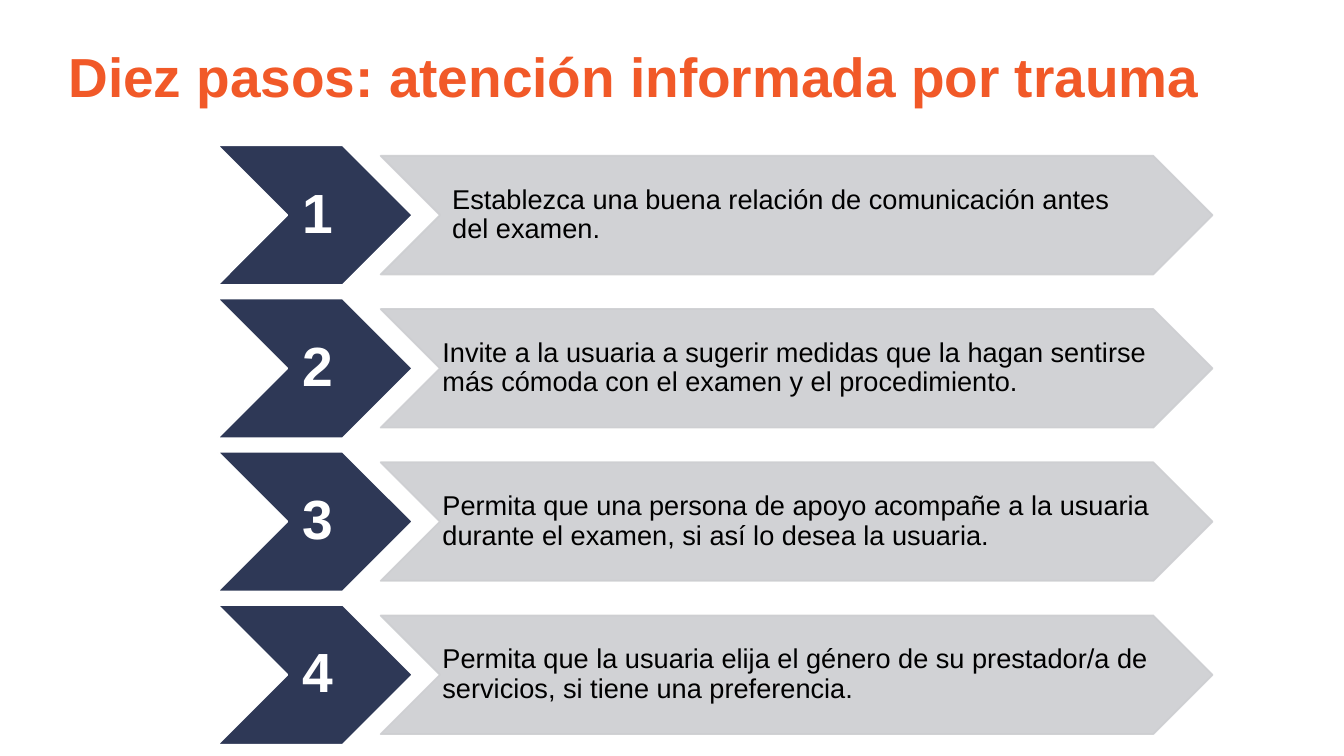
from lxml.etree import SubElement
from pptx import Presentation
from pptx.dml.color import RGBColor as Rgb
from pptx.enum.shapes import MSO_SHAPE as Kind
from pptx.enum.text import MSO_ANCHOR as Anchor, PP_ALIGN as Align
from pptx.oxml.ns import qn
from pptx.util import Pt

COLORS = {"title": "F15928", "navy": "2E3856", "gray": "CDCED1",
          "white": "FFFFFF", "black": "000000"}
FONT = "Arial"
TITLE = "Diez pasos: atención informada por trauma"
STEPS = [
    "Establezca una buena relación de comunicación antes del examen.",
    "Invite a la usuaria a sugerir medidas que la hagan sentirse más cómoda "
    "con el examen y el procedimiento.",
    "Permita que una persona de apoyo acompañe a la usuaria durante el examen, "
    "si así lo desea la usuaria.",
    "Permita que la usuaria elija el género de su prestador/a de servicios, "
    "si tiene una preferencia.",
]


def color(name):
    return Rgb.from_string(COLORS[name])


def add_text(slide, box, text, size, ink, bold=False, align=Align.LEFT,
             pads=(0, 0, 0, 0), lead=1.0):
    frame = slide.shapes.add_textbox(*map(Pt, box)).text_frame
    frame.word_wrap = True
    frame.vertical_anchor = Anchor.MIDDLE
    (frame.margin_left, frame.margin_top,
     frame.margin_right, frame.margin_bottom) = map(Pt, pads)
    para = frame.paragraphs[0]
    para.text = text
    para.alignment = align
    para.line_spacing = lead
    font = para.font
    font.name, font.size, font.bold = FONT, Pt(size), bold
    font.color.rgb = color(ink)


def add_arrow(slide, box, fill, line, alpha=100):
    shape = slide.shapes.add_shape(Kind.CHEVRON, *map(Pt, box))
    shape.shadow.inherit = False
    shape.fill.solid()
    shape.fill.fore_color.rgb = color(fill)
    shape.line.color.rgb = color(line)
    shape.line.width = Pt(2)
    if alpha < 100:
        for tone in shape.element.spPr.iter(qn("a:srgbClr")):
            SubElement(tone, qn("a:alpha"), val=str(alpha * 1000))


def add_step(slide, box, num, text):
    left, top, width, height = box
    add_arrow(slide, (left, top, 229.7, height), "navy", "white")
    add_text(slide, (left + 82, top, 65, height), str(num), 65, "white",
             True, Align.CENTER, (6.5, 3.6, 0, 3.6), 0.9)
    bar = top + 12.4, height - 24.8
    add_arrow(slide, (left + 192.2, bar[0], width - 192.2, bar[1]),
              "gray", "gray", 90)
    pads = (14.4,) * 4 if num == 1 else (2.9, 1.4, 0, 1.4)
    add_text(slide, (left + 262, bar[0], 841, bar[1]), text, 32, "black",
             pads=pads, lead=0.9)


def add_steps(slide, box):
    left, top, width, height = box
    pitch, tall = 180.5, height - 180.5 * (len(STEPS) - 1)
    for i, text in enumerate(STEPS):
        add_step(slide, (left, top + i * pitch, width, tall), i + 1, text)


def main():
    deck = Presentation()
    deck.slide_width, deck.slide_height = Pt(1583.3), Pt(890.6)
    slide = deck.slides.add_slide(deck.slide_layouts[6])
    add_text(slide, (59.8, 46, 1373.8, 87), TITLE, 64.8, "title",
             True, Align.CENTER)
    add_steps(slide, (256.3, 171.2, 1172.2, 706))
    deck.save("out.pptx")


if __name__ == "__main__":
    main()
